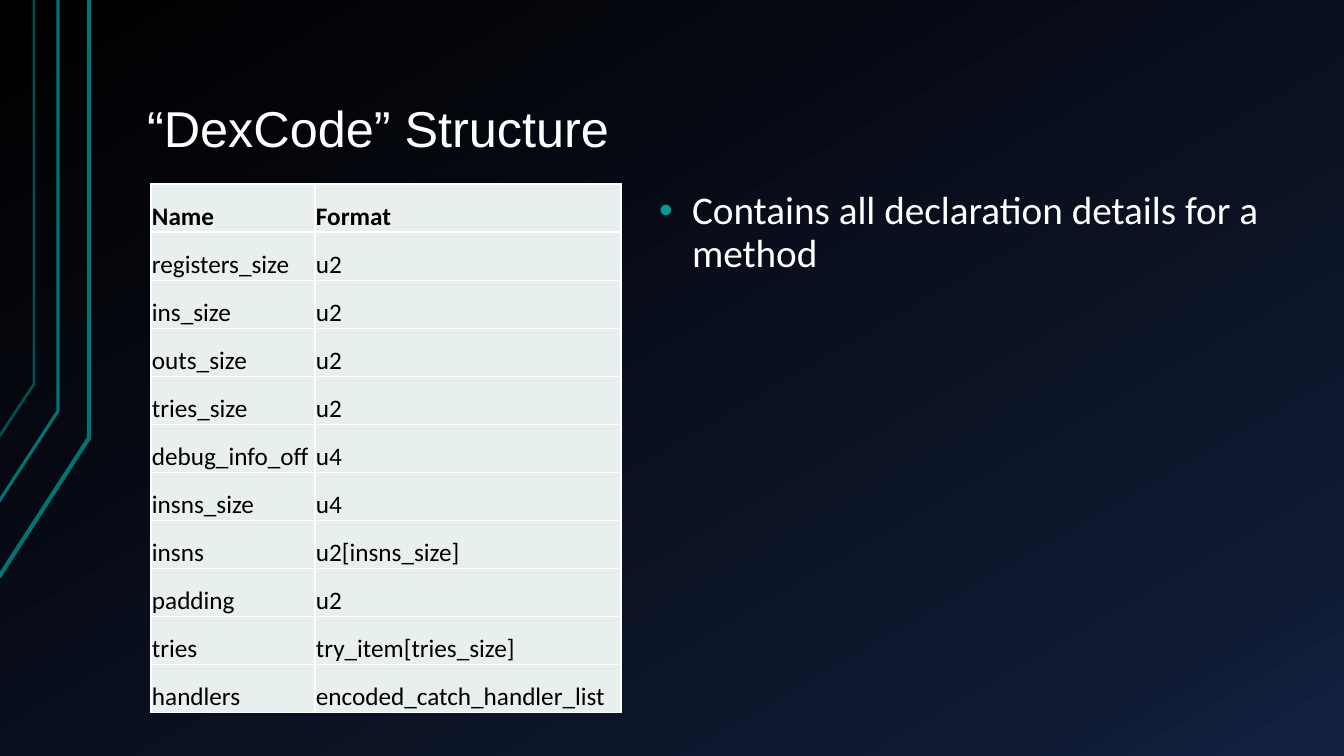
"""Build the DexCode structure slide."""
from copy import deepcopy

from lxml.etree import SubElement
from pptx import Presentation
from pptx.dml.color import RGBColor
from pptx.enum.text import MSO_ANCHOR as Anchor, MSO_AUTO_SIZE as AutoSize, PP_ALIGN as Align
from pptx.oxml.ns import qn
from pptx.util import Emu, Pt

TITLE = "“DexCode” Structure"
BODY = "Contains all declaration details for a method"
FIELDS = [
    ("Name", "Format"),
    ("registers_size", "u2"),
    ("ins_size", "u2"),
    ("outs_size", "u2"),
    ("tries_size", "u2"),
    ("debug_info_off", "u4"),
    ("insns_size", "u4"),
    ("insns", "u2[insns_size]"),
    ("padding", "u2"),
    ("tries", "try_item[tries_size]"),
    ("handlers", "encoded_catch_handler_list"),
]
COLORS = {"white": "FFFFFF", "black": "000000", "cell": "E7EFEF",
          "line": "007373", "bullet": "009999"}
BACKDROP = [(0, "000000"), (0.85, "0F1931"), (1, "142242")]
TRACES = [
    ([(-1, 577), (89, 438), (89, 0)], 3, 100),
    ([(-2, 503), (58, 411), (58, 0)], 2.25, 100),
    ([(-1, 437), (34, 384), (34, 0)], 2, 65),
]
TITLE_BOX = (134, 30, 1142, 135)
TABLE_BOX = (151, 184, 470, 529)
BODY_BOX = (646, 184, 690, 126)
COLUMNS = (164, 306)
PX = 12192000 / 1344


def px(n):
    return Emu(round(n * PX))


def rgb(name):
    return RGBColor.from_string(COLORS[name])


def style(p, font, size, color, bold=False):
    for r in p.runs:
        r.font.name, r.font.size, r.font.bold = font, Pt(size), bold
        r.font.color.rgb = rgb(color)


def fill_placeholder(sp, box, text, font, size, anchor):
    sp.left, sp.top, sp.width, sp.height = map(px, box)
    tf = sp.text_frame
    tf.text = text
    tf.word_wrap, tf.auto_size, tf.vertical_anchor = True, AutoSize.NONE, anchor
    tf.margin_left = tf.margin_right = px(13)
    tf.margin_top = tf.margin_bottom = px(7)
    p = tf.paragraphs[0]
    p.alignment, p.line_spacing = Align.LEFT, 0.9
    style(p, font, size, "white")
    return p


def add_bullet(p):
    pPr = p._p.get_or_add_pPr()
    pPr.set("marL", str(px(33)))
    pPr.set("indent", str(px(-33)))
    color = SubElement(pPr, qn("a:buClr"))
    SubElement(color, qn("a:srgbClr"), val=COLORS["bullet"])
    SubElement(pPr, qn("a:buFont"), typeface="Arial")
    SubElement(pPr, qn("a:buChar"), char="•")


def add_borders(cell):
    tcPr = cell._tc.get_or_add_tcPr()
    for i, side in enumerate("LRTB"):
        ln = SubElement(tcPr, qn(f"a:ln{side}"), w=str(Pt(1)))
        fill = SubElement(ln, qn("a:solidFill"))
        SubElement(fill, qn("a:srgbClr"), val=COLORS["white"])
        tcPr.insert(i, ln)


def paint_background(s):
    fill = s.background.fill
    fill.gradient()
    fill.gradient_angle = 300
    stops = s._element.find(".//" + qn("a:gsLst"))
    stops.append(deepcopy(stops[-1]))
    for stop, (position, color) in zip(fill.gradient_stops, BACKDROP):
        stop.position = position
        stop.color.rgb = RGBColor.from_string(color)


def add_trace(s, points, width, opacity):
    builder = s.shapes.build_freeform(*points[0], scale=PX)
    builder.add_line_segments(points[1:], close=False)
    sp = builder.convert_to_shape()
    sp.shadow.inherit = False
    sp.fill.background()
    sp.line.color.rgb = rgb("line")
    sp.line.width = Pt(width)
    if opacity < 100:
        color = sp.line._ln.find(".//" + qn("a:srgbClr"))
        SubElement(color, qn("a:alpha"), val=str(opacity * 1000))


def add_fields(s):
    table = s.shapes.add_table(len(FIELDS), len(COLUMNS), *map(px, TABLE_BOX)).table
    for column, width in zip(table.columns, COLUMNS):
        column.width = px(width)
    for i, row in enumerate(FIELDS):
        for j, text in enumerate(row):
            cell = table.cell(i, j)
            cell.text = text
            cell.vertical_anchor = Anchor.BOTTOM
            cell.margin_left = cell.margin_right = cell.margin_top = px(1)
            cell.margin_bottom = 0
            cell.fill.solid()
            cell.fill.fore_color.rgb = rgb("cell")
            add_borders(cell)
            style(cell.text_frame.paragraphs[0], "Calibri", 18, "black", i == 0)


def main():
    prs = Presentation()
    prs.slide_width, prs.slide_height = px(1344), px(756)
    s = prs.slides.add_slide(prs.slide_layouts[1])
    paint_background(s)
    for trace in TRACES:
        add_trace(s, *trace)
    fill_placeholder(s.shapes.title, TITLE_BOX, TITLE, "Arial", 36, Anchor.BOTTOM)
    add_fields(s)
    p = fill_placeholder(s.placeholders[1], BODY_BOX, BODY, "Calibri", 28, Anchor.TOP)
    p.space_before = Pt(16)
    add_bullet(p)
    prs.save("out.pptx")


if __name__ == "__main__":
    main()
